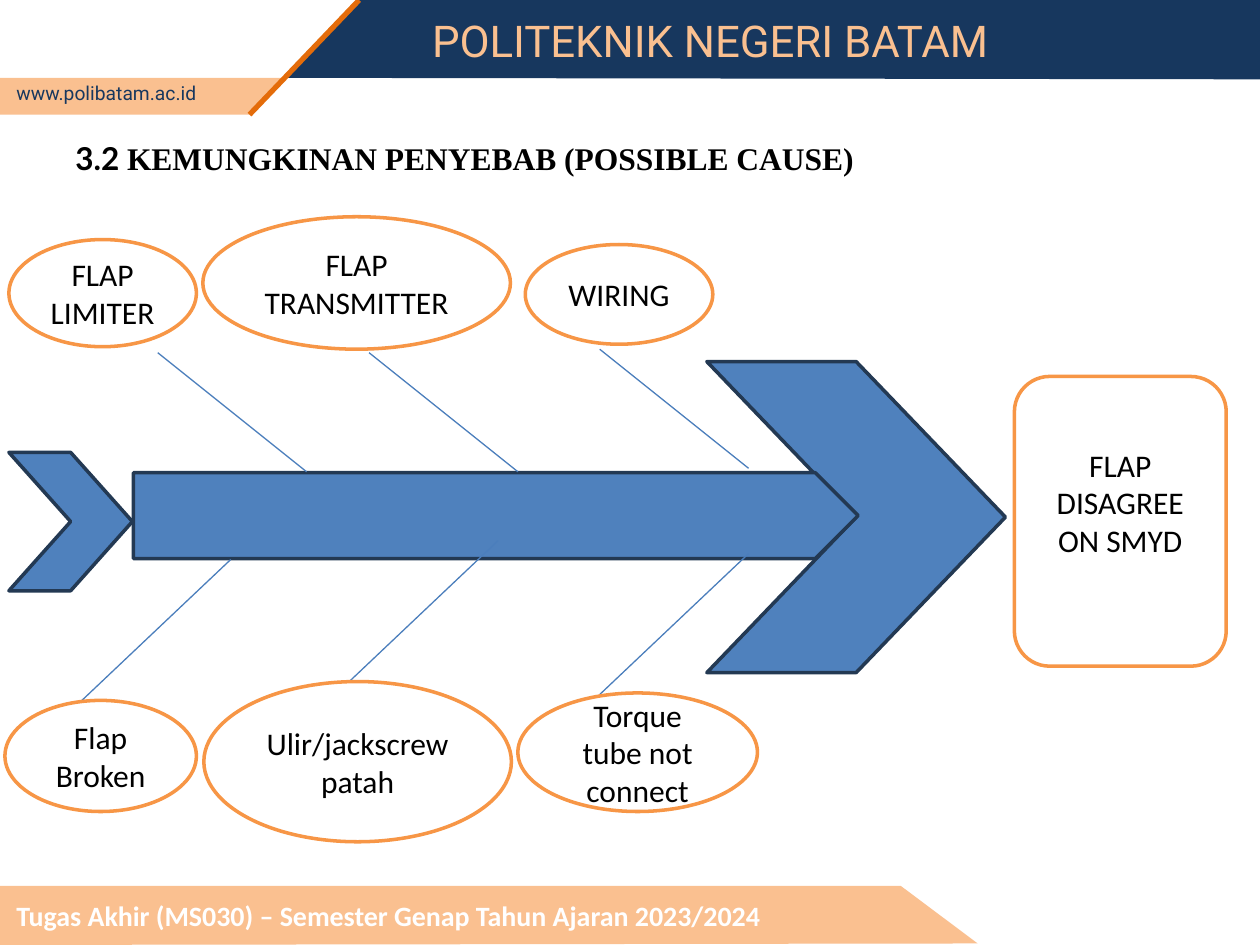
from pptx import Presentation
from pptx.dml.color import RGBColor
from pptx.enum.shapes import MSO_CONNECTOR, MSO_SHAPE
from pptx.enum.text import MSO_ANCHOR, PP_ALIGN
from pptx.oxml.ns import qn
from pptx.util import Cm, Pt
from lxml.etree import SubElement

PEACH = RGBColor(0xFA, 0xC0, 0x90)
NAVY = RGBColor(0x17, 0x37, 0x5E)
RUST = RGBColor(0xE4, 0x6C, 0x0A)
ORANGE = RGBColor(0xF7, 0x96, 0x46)
BLUE = RGBColor(0x4F, 0x81, 0xBD)
EDGE = RGBColor(0x23, 0x39, 0x53)
BONE = RGBColor(0x4B, 0x7E, 0xBC)
WHITE = RGBColor(0xFF, 0xFF, 0xFF)
BLACK = RGBColor(0, 0, 0)


def style(font, name, size, color, bold=False):
    font.name = name
    font.size = Pt(size)
    font.color.rgb = color
    font.bold = bold


def add_band(slide, color, points):
    start, *rest = [(Cm(x), Cm(y)) for x, y in points]
    builder = slide.shapes.build_freeform(*start)
    builder.add_line_segments(rest)
    band = builder.convert_to_shape()
    band.shadow.inherit = False
    band.fill.solid()
    band.fill.fore_color.rgb = color
    band.line.fill.background()


def add_line(slide, start, end, color, width):
    line = slide.shapes.add_connector(
        MSO_CONNECTOR.STRAIGHT, *map(Cm, start + end))
    line.line.color.rgb = color
    line.line.width = Pt(width)
    SubElement(line._element.spPr, qn("a:effectLst"))


def add_text(slide, box, text, name, size, color, bold=False):
    frame = slide.shapes.add_textbox(*map(Cm, box)).text_frame
    frame.word_wrap = True
    para = frame.paragraphs[0]
    para.text = text
    style(para.font, name, size, color, bold)


def add_title(slide):
    box = slide.shapes.add_textbox(Cm(1.27), Cm(2.54), Cm(22.86), Cm(1.27))
    frame = box.text_frame
    frame.word_wrap = True
    frame.vertical_anchor = MSO_ANCHOR.MIDDLE
    for text, name in (("3.2 ", "Lato"),
                       ("KEMUNGKINAN PENYEBAB (POSSIBLE CAUSE)",
                        "Times New Roman")):
        run = frame.paragraphs[0].add_run()
        run.text = text
        style(run.font, name, 18, BLACK, True)


def add_shape(slide, kind, box, fill, edge):
    shape = slide.shapes.add_shape(kind, *map(Cm, box))
    shape.shadow.inherit = False
    shape.fill.solid()
    shape.fill.fore_color.rgb = fill
    shape.line.color.rgb = edge
    shape.line.width = Pt(2)
    return shape


def add_label(slide, kind, box, text):
    shape = add_shape(slide, kind, box, WHITE, ORANGE)
    frame = shape.text_frame
    frame.word_wrap = True
    frame.vertical_anchor = MSO_ANCHOR.MIDDLE
    para = frame.paragraphs[0]
    para.text = text
    para.alignment = PP_ALIGN.CENTER
    style(para.font, "Calibri", 18, BLACK)
    return shape


def add_frame(slide):
    add_band(slide, PEACH, [(0, 2.31), (5.03, 2.31), (5.72, 1.57), (0, 1.57)])
    add_band(slide, NAVY, [(25.4, 0), (7.24, 0), (5.69, 1.57), (25.4, 1.6)])
    add_line(slide, (5.03, 2.31), (7.24, 0), RUST, 3)
    add_text(slide, (0.08, 1.52, 6.12, 0.74), "www.polibatam.ac.id",
             "Roboto", 11, NAVY)
    add_text(slide, (8.46, 0.15, 14.71, 1.32), "POLITEKNIK NEGERI BATAM",
             "Roboto", 25, PEACH)
    add_band(slide, PEACH,
             [(0, 17.86), (18.16, 17.86), (19.71, 19.02), (0, 19.05)])
    add_text(slide, (0.08, 17.98, 18.54, 0.94),
             "Tugas Akhir (MS030) – Semester Genap Tahun Ajaran 2023/2024",
             "Calibri", 16, WHITE, True)


def add_fish(slide):
    for kind, box in (
            (MSO_SHAPE.CHEVRON, (14.25, 7.29, 6.02, 6.27)),
            (MSO_SHAPE.PENTAGON, (2.69, 9.53, 14.61, 1.73)),
            (MSO_SHAPE.CHEVRON, (0.18, 9.12, 2.49, 2.79))):
        add_shape(slide, kind, box, BLUE, EDGE)
    for rise, starts in (
            (2.4, [(3.18, 7.11), (7.44, 7.11), (12.09, 7.04)]),
            (-2.84, [(1.65, 14.12), (7.04, 13.74), (12.09, 14)])):
        for x, y in starts:
            add_line(slide, (x, y), (x + 3, y + rise), BONE, 0.75)


def add_causes(slide):
    for text, box in (
            ("FLAP LIMITER", (0.18, 4.83, 3.78, 2.16)),
            ("FLAP TRANSMITTER", (4.09, 4.37, 6.2, 2.67)),
            ("WIRING", (10.59, 4.93, 3.78, 2.01)),
            ("Flap Broken", (0.1, 14.12, 3.86, 2.24)),
            ("Ulir/jackscrew patah", (4.11, 13.74, 6.2, 3.23)),
            ("Torque tube not connect", (10.44, 13.97, 4.83, 2.39))):
        add_label(slide, MSO_SHAPE.OVAL, box, text)
    effect = add_label(slide, MSO_SHAPE.ROUNDED_RECTANGLE,
                       (20.45, 7.59, 4.27, 5.84), "FLAP DISAGREE ON SMYD")
    effect.text_frame.margin_bottom = Cm(0.89)


def main():
    deck = Presentation()
    deck.slide_width = Cm(25.4)
    deck.slide_height = Cm(19.05)
    slide = deck.slides.add_slide(deck.slide_layouts[6])
    add_frame(slide)
    add_title(slide)
    add_fish(slide)
    add_causes(slide)
    deck.save("out.pptx")


if __name__ == "__main__":
    main()
